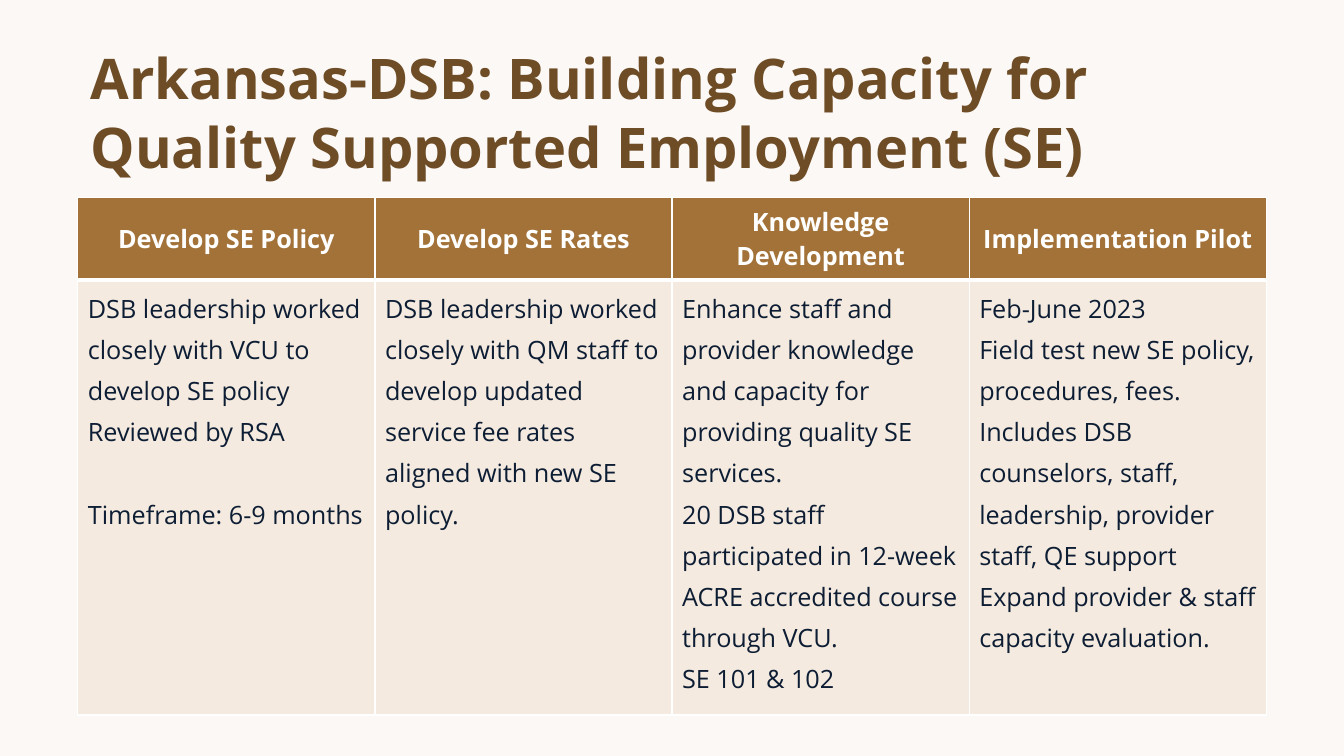
from dataclasses import dataclass

from lxml.etree import SubElement
from pptx import Presentation
from pptx.dml.color import RGBColor
from pptx.enum.text import MSO_ANCHOR, MSO_AUTO_SIZE, PP_ALIGN
from pptx.oxml.ns import qn
from pptx.util import Pt


@dataclass(frozen=True)
class Theme:
    font: str = "Open Sans"
    title_size: float = 40
    table_size: float = 18
    background: str = "FBF8F5"
    title: str = "6D4C26"
    header: str = "A37239"
    body: str = "F4EADF"
    ink: str = "0D1D34"
    white: str = "FFFFFF"


THEME = Theme()
BLANK_LINE = 29.4  # gap of one body line, in points

TITLE = "Arkansas-DSB: Building Capacity for Quality Supported Employment (SE)"
# Each column: heading, then paragraphs as (text, space before)
STAGES = [
    ("Develop SE Policy", [
        ("DSB leadership worked closely with VCU to develop SE policy", 0),
        ("Reviewed by RSA", 0),
        ("Timeframe: 6-9 months", BLANK_LINE)]),
    ("Develop SE Rates", [
        ("DSB leadership worked closely with QM staff to develop updated "
         "service fee rates aligned with new SE policy.", 0)]),
    ("Knowledge Development", [
        ("Enhance staff and provider knowledge and capacity for providing "
         "quality SE services.", 0),
        ("20 DSB staff participated in 12-week ACRE accredited course "
         "through VCU.", 0),
        ("SE 101 & 102", 0)]),
    ("Implementation Pilot", [
        ("Feb-June 2023", 0),
        ("Field test new SE policy, procedures, fees.", 0),
        ("Includes DSB counselors, staff, leadership, provider staff, "
         "QE support", 0),
        ("Expand provider & staff capacity evaluation.", 0)]),
]


def rgb(color):
    return RGBColor.from_string(color)


def write(tf, paragraphs, *, size, color, bold=False, align=PP_ALIGN.LEFT,
          spacing=1.0):
    """Fill a text frame with (text, space before) paragraphs."""
    for i, (text, before) in enumerate(paragraphs):
        p = tf.paragraphs[0] if i == 0 else tf.add_paragraph()
        p.alignment = align
        p.line_spacing = spacing
        p.space_before = Pt(before)
        r = p.add_run()
        r.text = text
        r.font.name = THEME.font
        r.font.size = Pt(size)
        r.font.bold = bold
        r.font.color.rgb = rgb(color)


def style_cell(cell, fill, bottom):
    """Give a cell white borders, with its own bottom width, and a fill."""
    tc_pr = cell._tc.get_or_add_tcPr()
    for side, width in (("L", 1), ("R", 1), ("T", 1), ("B", bottom)):
        ln = SubElement(tc_pr, qn(f"a:ln{side}"), w=str(Pt(width)))
        solid = SubElement(ln, qn("a:solidFill"))
        SubElement(solid, qn("a:srgbClr"), val=THEME.white)
    cell.fill.solid()
    cell.fill.fore_color.rgb = rgb(fill)


def place_title(slide, left, top, width, height):
    sp = slide.shapes.title
    sp.left, sp.top, sp.width, sp.height = map(Pt, (left, top, width, height))
    tf = sp.text_frame
    tf.word_wrap = True
    tf.auto_size = MSO_AUTO_SIZE.NONE
    tf.vertical_anchor = MSO_ANCHOR.BOTTOM
    tf.margin_left = tf.margin_right = Pt(7.2)
    tf.margin_top = tf.margin_bottom = 0
    write(tf, [(TITLE, 0)], size=THEME.title_size, color=THEME.title,
          bold=True, spacing=1.02)


def add_stage_table(slide, left, top, width, height, header_height=59):
    table = slide.shapes.add_table(
        2, len(STAGES), Pt(left), Pt(top), Pt(width), Pt(height)).table
    table.rows[0].height = Pt(header_height)
    table.rows[1].height = Pt(height - header_height)
    for i, (heading, paragraphs) in enumerate(STAGES):
        table.columns[i].width = Pt(width / len(STAGES))
        head, body = table.cell(0, i), table.cell(1, i)
        style_cell(head, THEME.header, bottom=3)
        style_cell(body, THEME.body, bottom=1)
        head.vertical_anchor = MSO_ANCHOR.MIDDLE
        write(head.text_frame, [(heading, 0)], size=THEME.table_size,
              color=THEME.white, bold=True, align=PP_ALIGN.CENTER)
        write(body.text_frame, paragraphs, size=THEME.table_size,
              color=THEME.ink, spacing=1.2)


def main():
    prs = Presentation()
    prs.slide_width, prs.slide_height = Pt(960), Pt(540)
    slide = prs.slides.add_slide(prs.slide_layouts[5])
    slide.background.fill.solid()
    slide.background.fill.fore_color.rgb = rgb(THEME.background)
    place_title(slide, 57.6, 28.8, 849, 99.4)
    add_stage_table(slide, 55.6, 140.8, 849, 370)
    prs.save("out.pptx")


if __name__ == "__main__":
    main()
